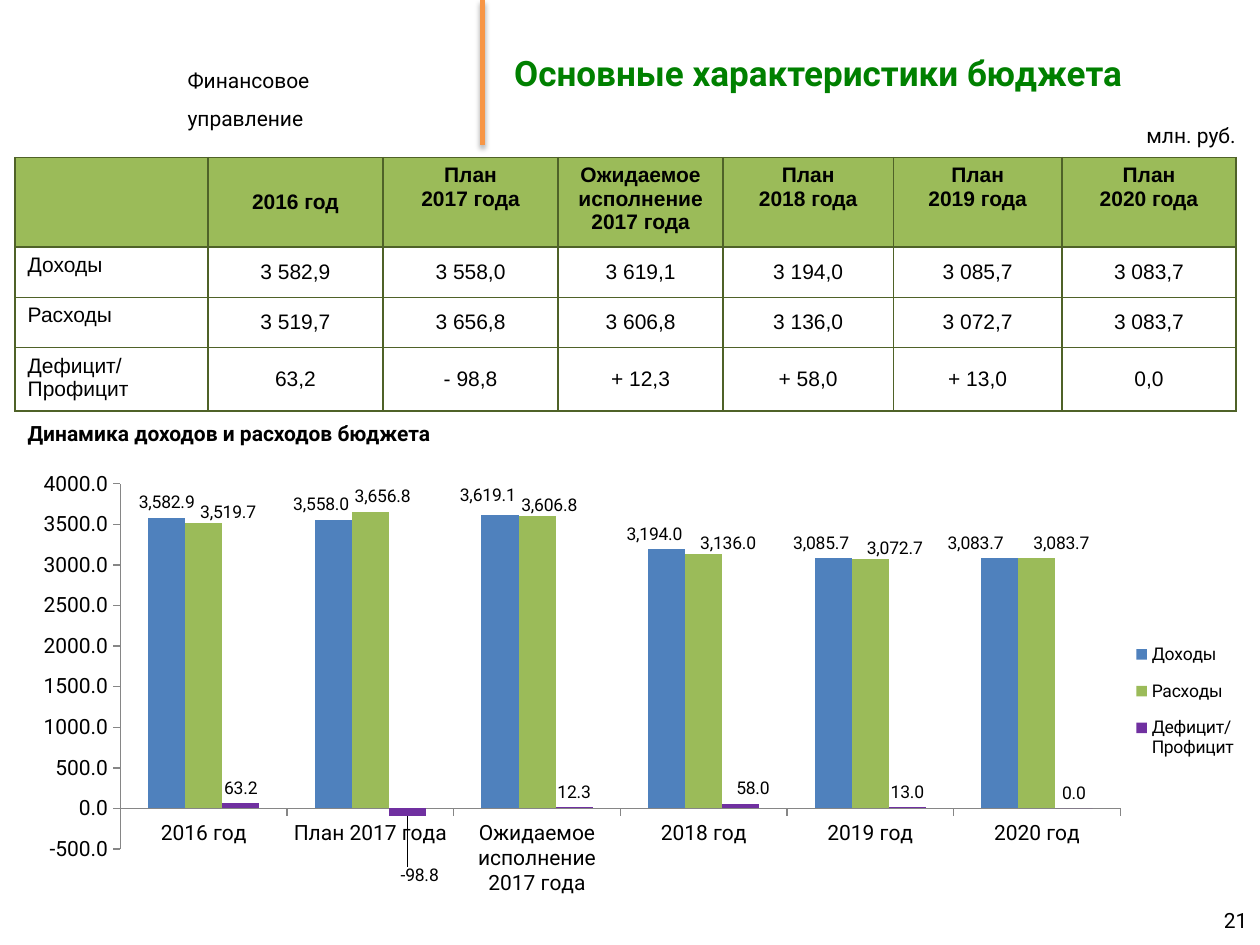
from dataclasses import dataclass

from lxml import etree
from pptx import Presentation
from pptx.chart.data import CategoryChartData
from pptx.dml.color import RGBColor
from pptx.enum.chart import XL_CHART_TYPE, XL_LABEL_POSITION, XL_LEGEND_POSITION, XL_TICK_MARK
from pptx.enum.shapes import MSO_CONNECTOR
from pptx.enum.text import MSO_ANCHOR, PP_ALIGN
from pptx.oxml import parse_xml
from pptx.oxml.ns import nsdecls, qn
from pptx.util import Inches, Pt

LEFT, CENTER, RIGHT = PP_ALIGN.LEFT, PP_ALIGN.CENTER, PP_ALIGN.RIGHT
TOP, MIDDLE = MSO_ANCHOR.TOP, MSO_ANCHOR.MIDDLE
COLUMNS, ROWS = 100, 75
UNIT = Inches(10) // COLUMNS  # one grid column or row


@dataclass(frozen=True)
class Theme:
    font: str = "Roboto"
    table_font: str = "Arial"
    text: str = "000000"
    title: str = "008000"
    accent: str = "F79646"
    border: str = "4F6228"
    axis: str = "868686"
    income: str = "4F81BD"
    spending: str = "9BBB59"
    balance: str = "7030A0"
    title_size: int = 20
    body_size: int = 12
    label_size: int = 10


THEME = Theme()

HEADERS = ["", "2016 год", "План\n2017 года", "Ожидаемое исполнение 2017 года",
           "План\n2018 года", "План\n2019 года", "План\n2020 года"]
BUDGET = [
    ["Доходы", "3 582,9", "3 558,0", "3 619,1", "3 194,0", "3 085,7", "3 083,7"],
    ["Расходы", "3 519,7", "3 656,8", "3 606,8", "3 136,0", "3 072,7", "3 083,7"],
    ["Дефицит/\nПрофицит", "63,2", "- 98,8", "+ 12,3", "+ 58,0", "+ 13,0", "0,0"],
]
COLUMN_WIDTHS = [15.3, 13.9, 13.9, 13.1, 13.5, 13.4, 13.8]
ROW_HEIGHTS = [7.1, 4, 4, 5]

CATEGORIES = ["2016 год", "План 2017 года", "Ожидаемое исполнение 2017 года",
              "2018 год", "2019 год", "2020 год"]
# name, colour, number format, values, label shifts {point: (x, y)} as shares of the chart
SERIES = [
    ("Доходы", THEME.income, "#,##0.0", [3582.9, 3558, 3619.1, 3194, 3085.7, 3083.7],
     {1: (-0.01, 0), 2: (-0.01, -0.01), 3: (-0.01, 0), 4: (-0.01, 0), 5: (-0.02, 0)}),
    ("Расходы", THEME.spending, "#,##0.0", [3519.7, 3656.8, 3606.8, 3136, 3072.7, 3083.7],
     {0: (0.02, 0.01), 1: (0.01, 0), 2: (0.01, 0.01), 3: (0.02, 0.01),
      4: (0.02, 0.01), 5: (0.02, 0)}),
    ("Дефицит/Профицит", THEME.balance, "0.0", [63.2, -98.8, 12.3, 58, 13, 0],
     {1: (0.01, 0.1), 3: (0.01, 0), 4: (0, 0)}),
]


def grid(*lengths):
    return [round(length * UNIT) for length in lengths]


def format_font(font, color=THEME.text, **values):
    settings = {"name": THEME.font, "size": THEME.body_size, "bold": False, **values}
    settings["size"] = Pt(settings["size"])
    for name, value in settings.items():
        setattr(font, name, value)
    font.color.rgb = RGBColor.from_string(color)


def write(tf, text, align=LEFT, spacing=None, **font):
    tf.text = text
    for p in tf.paragraphs:
        p.alignment = align
        p.line_spacing = spacing
        format_font(p.font, **font)


def add_text(slide, box, text, wrap=False, anchor=TOP, **style):
    tf = slide.shapes.add_textbox(*grid(*box)).text_frame
    tf.word_wrap = wrap
    tf.vertical_anchor = anchor
    write(tf, text, **style)


def add_header(slide, box):
    left, top, width, height = box
    divider = left + 0.383 * width
    add_text(slide, (left + 13.9, top + 3.9, 13, 7), "Финансовое управление",
             wrap=True, spacing=1.5)

    # Divider with a soft shadow
    line = slide.shapes.add_connector(
        MSO_CONNECTOR.STRAIGHT, *grid(divider, top, divider, top + height))
    line.line.color.rgb = RGBColor.from_string(THEME.accent)
    line.line.width = Pt(3)
    line._element.spPr.append(parse_xml(
        f'<a:effectLst {nsdecls("a")}><a:outerShdw blurRad="{Pt(3.1)}" dist="{Pt(1.8)}" '
        f'dir="5400000" rotWithShape="0"><a:srgbClr val="{THEME.text}">'
        '<a:alpha val="35000"/></a:srgbClr></a:outerShdw></a:effectLst>'))

    # Title
    title = slide.shapes.title
    title.left, title.top, title.width, title.height = grid(
        divider + 1.5, top, width - divider - 1.5, height)
    title.text_frame.vertical_anchor = MIDDLE
    write(title.text_frame, "Основные характеристики бюджета",
          color=THEME.title, size=THEME.title_size, bold=True)


def add_borders(cell):
    tc_pr = cell._tc.get_or_add_tcPr()
    for index, side in enumerate(("lnL", "lnR", "lnT", "lnB")):
        tc_pr.insert(index, parse_xml(
            f'<a:{side} {nsdecls("a")} w="{Pt(1)}"><a:solidFill>'
            f'<a:srgbClr val="{THEME.border}"/></a:solidFill></a:{side}>'))


def add_budget_table(slide, box):
    rows = [HEADERS, *BUDGET]
    table = slide.shapes.add_table(len(rows), len(HEADERS), *grid(*box)).table
    for column, width in zip(table.columns, grid(*COLUMN_WIDTHS)):
        column.width = width
    for row, height in zip(table.rows, grid(*ROW_HEIGHTS)):
        row.height = height
    for i, row in enumerate(rows):
        for j, text in enumerate(row):
            cell = table.cell(i, j)
            is_header = i == 0
            write(cell.text_frame, text, align=CENTER if is_header or j else LEFT,
                  name=THEME.table_font, bold=is_header)
            centred = j == 1 if is_header else j > 0
            cell.vertical_anchor = MIDDLE if centred else TOP
            if is_header:
                cell.fill.solid()
                cell.fill.fore_color.rgb = RGBColor.from_string(THEME.spending)
            else:
                cell.fill.background()
            add_borders(cell)


def set_layout(parent, index, **values):
    """Place a chart part by hand; values are shares of the chart."""
    for old in parent.findall(qn("c:layout")):
        parent.remove(old)
    layout = etree.Element(qn("c:layout"))
    manual = etree.SubElement(layout, qn("c:manualLayout"))
    for name, value in values.items():
        etree.SubElement(manual, qn(f"c:{name}"), val=str(value))
    parent.insert(index, layout)


def format_labels(series, number_format, shifts):
    labels = series.data_labels
    labels.show_value = True
    labels.number_format = number_format
    labels.number_format_is_linked = False
    labels.position = XL_LABEL_POSITION.OUTSIDE_END
    format_font(labels.font, size=THEME.label_size)
    for point in shifts:
        label = series.points[point].data_label
        format_font(label.font, size=THEME.label_size)
        label.position = XL_LABEL_POSITION.OUTSIDE_END
    for label, (x, y) in zip(series._element.iter(qn("c:dLbl")), shifts.values()):
        set_layout(label, 1, x=x, y=y)
        label.insert(2, parse_xml(
            f'<c:numFmt {nsdecls("c")} formatCode="{number_format}" sourceLinked="0"/>'))


def add_budget_chart(slide, box):
    data = CategoryChartData(number_format="0.0")
    data.categories = CATEGORIES
    for name, _, _, values, _ in SERIES:
        data.add_series(name, values)
    chart = slide.shapes.add_chart(XL_CHART_TYPE.COLUMN_CLUSTERED, *grid(*box), data).chart
    chart.has_title = False
    format_font(chart.font)

    # Columns and their labels
    plot = chart.plots[0]
    plot.gap_width, plot.overlap, plot.vary_by_categories = 150, 0, False
    for series, (_, color, number_format, _, shifts) in zip(plot.series, SERIES):
        series.format.fill.solid()
        series.format.fill.fore_color.rgb = RGBColor.from_string(color)
        series.invert_if_negative = False
        format_labels(series, number_format, shifts)

    # Axes
    for axis in (chart.category_axis, chart.value_axis):
        axis.has_major_gridlines = False
        axis.major_tick_mark = XL_TICK_MARK.OUTSIDE
        axis.format.line.color.rgb = RGBColor.from_string(THEME.axis)
        format_font(axis.tick_labels.font)
    axis = chart.value_axis
    axis.minimum_scale, axis.maximum_scale, axis.major_unit = -500, 4000, 500
    axis.tick_labels.number_format = "0.0"
    axis.tick_labels.number_format_is_linked = False

    # Legend and plot area
    chart.has_legend = True
    chart.legend.position = XL_LEGEND_POSITION.RIGHT
    chart.legend.include_in_layout = False
    format_font(chart.legend.font, size=THEME.label_size)
    set_layout(chart.element.find(".//" + qn("c:legend")), 1,
               xMode="edge", yMode="edge", x=0.9, y=0.37, w=0.1, h=0.33)
    set_layout(chart.element.find(".//" + qn("c:plotArea")), 0, layoutTarget="inner",
               xMode="edge", yMode="edge", x=0.078, y=0.048, w=0.819, h=0.819)


def main():
    prs = Presentation()
    prs.slide_width, prs.slide_height = grid(COLUMNS, ROWS)
    slide = prs.slides.add_slide(prs.slide_layouts[5])
    add_header(slide, (0, 0, COLUMNS, 11.5))
    add_text(slide, (90, 9.2, 9.2, 3), "млн. руб.")
    add_budget_chart(slide, (2, 36.7, 96.9, 35.4))
    add_budget_table(slide, (1.2, 12.5, 96.9, 20.1))
    add_text(slide, (1.2, 32.9, 37.5, 3), "Динамика доходов и расходов бюджета", bold=True)
    add_text(slide, (76.7, 71, 23.3, 4), "21", wrap=True, anchor=MIDDLE, align=RIGHT)
    prs.save("out.pptx")


if __name__ == "__main__":
    main()
